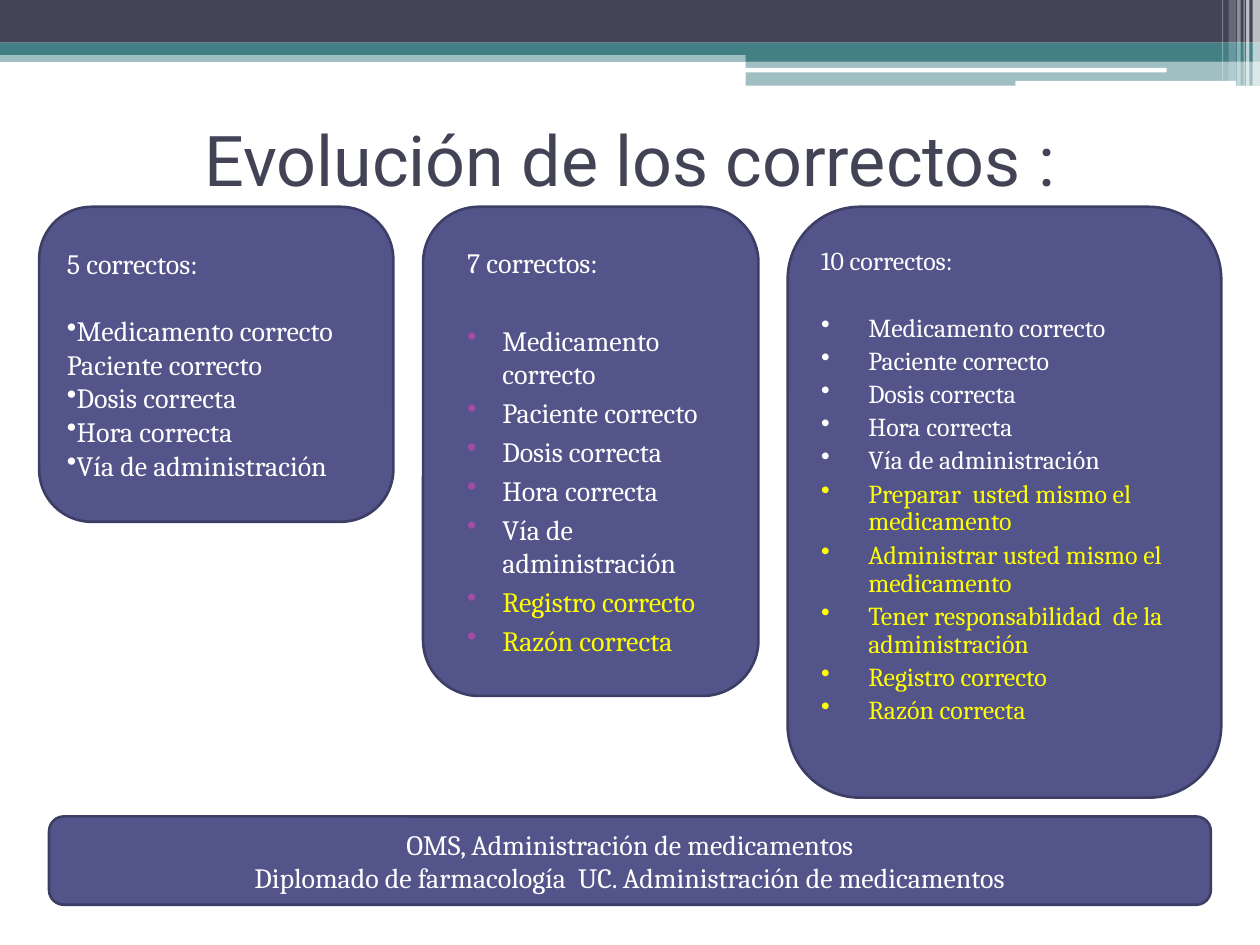
import pptx
import pptx.dml.color
import pptx.enum.shapes
import pptx.enum.text
import pptx.oxml.ns
import pptx.util
from lxml import etree

Cm, Pt = pptx.util.Cm, pptx.util.Pt
RGBColor = pptx.dml.color.RGBColor
MSO_SHAPE = pptx.enum.shapes.MSO_SHAPE
PP_ALIGN = pptx.enum.text.PP_ALIGN
qn = pptx.oxml.ns.qn

WHITE = RGBColor(0xFF, 0xFF, 0xFF)
YELLOW = RGBColor(0xFF, 0xFF, 0x00)
SLATE = RGBColor(0x42, 0x44, 0x56)
TEAL = RGBColor(0x43, 0x80, 0x86)
INDIGO = RGBColor(0x53, 0x54, 0x8A)
EDGE = RGBColor(0x3D, 0x3E, 0x66)
PURPLE = RGBColor(0xA0, 0x4D, 0xA3)

BANDS = [
    (0, 1.02, 25.4, 0.23, TEAL, 50),
    (0, 0, 25.4, 0.86, SLATE, 100),
    (0, 0.86, 25.4, 0.25, TEAL, 100),
    (15.03, 0.99, 10.37, 0.25, TEAL, 100),
    (15.03, 1.22, 10.37, 0.51, TEAL, 50),
]
RULES = [(15.01, 1.37, 8.51, 0.09), (20.47, 1.63, 4.45, 0.1)]
STRIPES = [
    (25.25, 0.15, 1.73, 65),
    (25.12, 0.07, 1.73, 65),
    (25.07, 0.02, 1.73, 60),
    (24.94, 0.07, 1.73, 40),
    (24.77, 0.15, 1.63, 20),
    (24.64, 0.02, 1.63, 30),
]
FIVE = ["Dosis correcta", "Hora correcta", "Vía de administración"]
BASIC = ["Medicamento correcto", "Paciente correcto"] + FIVE
ADDED = ["Registro correcto", "Razón correcta"]
PERSONAL = [
    "Preparar  usted mismo el medicamento",
    "Administrar usted mismo el medicamento",
    "Tener responsabilidad  de la administración",
]


def add_block(s, box, color, alpha=100, shape=MSO_SHAPE.RECTANGLE, line=None):
    sp = s.shapes.add_shape(shape, *map(Cm, box))
    sp.shadow.inherit = False
    sp.fill.solid()
    sp.fill.fore_color.rgb = color
    if alpha < 100:
        clr = sp.fill._xPr.find(qn("a:solidFill"))[0]
        etree.SubElement(clr, qn("a:alpha"), val=str(alpha * 1000))
    if line is None:
        sp.line.fill.background()
    else:
        sp.line.color.rgb = line
        sp.line.width = Pt(1.5)
    return sp


def add_bullet(p, color):
    pPr = p._p.get_or_add_pPr()
    if color is not None:
        clr = etree.SubElement(pPr, qn("a:buClr"))
        etree.SubElement(clr, qn("a:srgbClr"), val=str(color))
    etree.SubElement(pPr, qn("a:buChar"), char="•")


def add_text(tf, text, size=16, font="Cambria", color=WHITE,
             align=PP_ALIGN.LEFT, before=0, spacing=None, margin=0, hang=0,
             bullet=False, bullet_color=None):
    p = tf.paragraphs[0]
    if p.runs:
        p = tf.add_paragraph()
    p.alignment = align
    p.space_before = Pt(before)
    if spacing:
        p.line_spacing = spacing
    pPr = p._p.get_or_add_pPr()
    pPr.set("marL", str(Cm(margin)))
    pPr.set("indent", str(-Cm(hang)))
    if bullet:
        add_bullet(p, bullet_color)
    r = p.add_run()
    r.text = text
    r.font.size = Pt(size)
    r.font.name = font
    r.font.color.rgb = color


def add_panel(s, box):
    sp = add_block(s, box, INDIGO, shape=MSO_SHAPE.ROUNDED_RECTANGLE, line=EDGE)
    tf = sp.text_frame
    tf.word_wrap = True
    tf.vertical_anchor = pptx.enum.text.MSO_ANCHOR.MIDDLE
    return tf


def add_list_panel(s, box, heading, items, new_items=(), gap=19, before=0,
                   bullet_color=None, **style):
    tf = add_panel(s, box)
    add_text(tf, heading, before=before, **style)
    for i, item in enumerate([*items, *new_items]):
        add_text(tf, item, before=before if i else before + gap,
                 color=WHITE if i < len(items) else YELLOW,
                 bullet=True, bullet_color=bullet_color, **style)
    return tf


def add_header(s):
    for *box, color, alpha in BANDS:
        add_block(s, box, color, alpha)
    for box in RULES:
        add_block(s, box, WHITE, shape=MSO_SHAPE.ROUNDED_RECTANGLE)
    for left, width, height, alpha in STRIPES:
        add_block(s, (left, 0, width, height), WHITE, alpha)


def add_title(s, text):
    sp = s.shapes.add_textbox(Cm(1.27), Cm(1.4), Cm(22.86), Cm(3.58))
    tf = sp.text_frame
    tf.word_wrap = True
    tf.vertical_anchor = pptx.enum.text.MSO_ANCHOR.MIDDLE
    add_text(tf, text, size=40, font="Roboto", color=SLATE,
             align=PP_ALIGN.CENTER)


def main():
    prs = pptx.Presentation()
    prs.slide_width, prs.slide_height = Cm(25.4), Cm(19.05)
    s = prs.slides.add_slide(prs.slide_layouts[6])
    add_header(s)
    add_title(s, "Evolución de los correctos :")

    top = 4.17
    add_list_panel(s, (8.53, top, 6.76, 9.86), "7 correctos:", BASIC, ADDED,
                   gap=22, before=3, bullet_color=PURPLE, margin=1.02, hang=0.71)
    add_list_panel(s, (0.79, top, 7.14, 6.35), "5 correctos:",
                   ["Medicamento correcto Paciente correcto", *FIVE])
    tf = add_list_panel(s, (15.88, top, 8.74, 11.91), "10 correctos:", BASIC,
                        PERSONAL + ADDED, before=3, size=14.8, spacing=0.9,
                        margin=0.95, hang=0.95)
    tf.margin_bottom = Cm(0.75)

    tf = add_panel(s, (0.99, 16.46, 23.42, 1.78))
    for text in ("OMS, Administración de medicamentos",
                 "Diplomado de farmacología  UC. Administración de medicamentos"):
        add_text(tf, text, align=PP_ALIGN.CENTER)
    prs.save("out.pptx")


if __name__ == "__main__":
    main()
